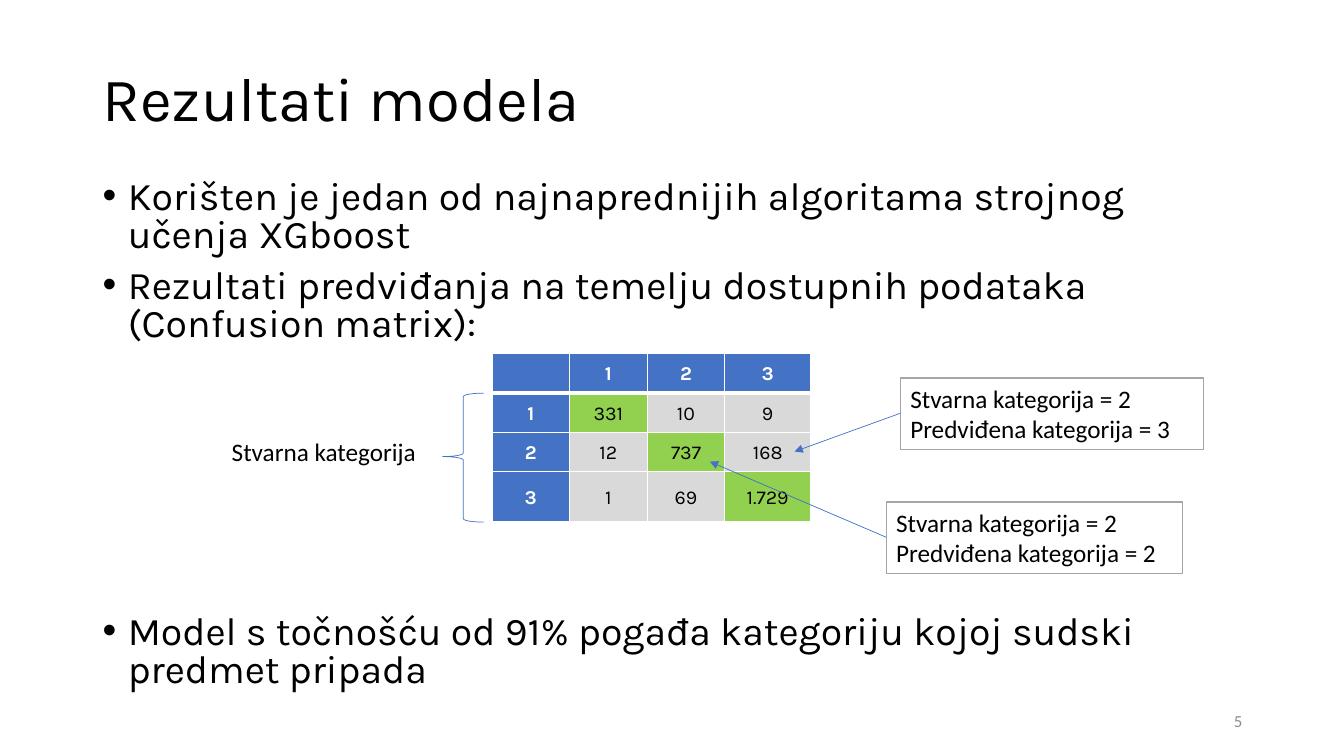
from lxml import etree
from pptx import Presentation
from pptx.dml.color import RGBColor
from pptx.enum.shapes import MSO_CONNECTOR, MSO_SHAPE
from pptx.enum.text import MSO_ANCHOR, PP_ALIGN
from pptx.oxml.ns import qn
from pptx.util import Inches, Pt

LEFT, CENTER, RIGHT = PP_ALIGN.LEFT, PP_ALIGN.CENTER, PP_ALIGN.RIGHT
TOP, MIDDLE = MSO_ANCHOR.TOP, MSO_ANCHOR.MIDDLE
STRAIGHT = MSO_CONNECTOR.STRAIGHT
RECTANGLE, LEFT_BRACE = MSO_SHAPE.RECTANGLE, MSO_SHAPE.LEFT_BRACE

COLORS = {
    "black": "000000", "white": "FFFFFF", "blue": "4472C4", "green": "92D050",
    "light gray": "D9D9D9", "border gray": "A5A5A5", "number gray": "8C8C8C",
}


def color(name):
    return RGBColor.from_string(COLORS[name])


class SlideBuilder:
    heading_font = "Karla"
    note_font = "Calibri"

    def __init__(self, slide):
        self.slide = slide

    def fill_text(self, frame, lines, font, size, ink="black", align=LEFT,
                  bold=False, spacing=None):
        frame.text = "\n".join(lines)
        for para in frame.paragraphs:
            para.alignment = align
            para.line_spacing = spacing
            for span in para.runs:
                span.font.name = font
                span.font.size = Pt(size)
                span.font.bold = bold
                span.font.color.rgb = color(ink)

    def text(self, area, lines, font, size, anchor=TOP, **style):
        box = self.slide.shapes.add_textbox(*map(Inches, area))
        frame = box.text_frame
        frame.word_wrap = True
        frame.vertical_anchor = anchor
        self.fill_text(frame, lines, font, size, **style)
        return frame

    def bullets(self, area, lines):
        frame = self.text(area, lines, self.heading_font, 28, spacing=0.8)
        for para in frame.paragraphs:
            para.space_before = Pt(10)
            properties = para._p.get_or_add_pPr()
            properties.set("marL", str(Inches(0.25)))
            properties.set("indent", str(-Inches(0.25)))
            etree.SubElement(properties, qn("a:buFont")).set("typeface", "Arial")
            etree.SubElement(properties, qn("a:buChar")).set("char", "•")

    def note(self, area, lines, border=None):
        box = self.slide.shapes.add_shape(RECTANGLE, *map(Inches, area))
        box.shadow.inherit = False
        box.fill.solid()
        box.fill.fore_color.rgb = color("white")
        if border:
            box.line.color.rgb = color(border)
            box.line.width = Pt(1)
        else:
            box.line.fill.background()
        box.text_frame.word_wrap = True
        box.text_frame.vertical_anchor = TOP
        self.fill_text(box.text_frame, lines, self.note_font, 18)

    def brace(self, area, curve, tip):
        brace = self.slide.shapes.add_shape(LEFT_BRACE, *map(Inches, area))
        brace.shadow.inherit = False
        brace.fill.background()
        brace.line.color.rgb = color("blue")
        brace.line.width = Pt(0.5)
        brace.adjustments[0] = curve
        brace.adjustments[1] = tip

    def arrow(self, start, end):
        arrow = self.slide.shapes.add_connector(
            STRAIGHT, *map(Inches, start + end))
        arrow.line.color.rgb = color("blue")
        arrow.line.width = Pt(0.5)
        tail = etree.SubElement(arrow.line._get_or_add_ln(), qn("a:tailEnd"))
        tail.set("type", "triangle")
        etree.SubElement(arrow._element.spPr, qn("a:effectLst"))

    def cell_borders(self, cell, widths):
        properties = cell._tc.get_or_add_tcPr()
        for side, width in widths.items():
            line = etree.SubElement(properties, qn(f"a:ln{side}"), w=str(Pt(width)))
            fill = etree.SubElement(line, qn("a:solidFill"))
            etree.SubElement(fill, qn("a:srgbClr"), val=COLORS["white"])

    def matrix(self, area, widths, heights, values):
        table = self.slide.shapes.add_table(
            len(heights), len(widths), *map(Inches, area)).table
        for column, width in zip(table.columns, widths):
            column.width = Inches(width)
        for row, height in zip(table.rows, heights):
            row.height = Inches(height)
        for r, row_values in enumerate(values):
            for c, value in enumerate(row_values):
                cell = table.cell(r, c)
                header = r == 0 or c == 0
                cell.margin_left = cell.margin_right = Inches(0.07)
                cell.margin_top = cell.margin_bottom = 0
                cell.vertical_anchor = MIDDLE
                self.cell_borders(cell, {"L": 1, "R": 1,
                                         "T": 3 if r == 1 else 1,
                                         "B": 3 if r == 0 else 1})
                cell.fill.solid()
                cell.fill.fore_color.rgb = color(
                    "blue" if header else "green" if r == c else "light gray")
                self.fill_text(cell.text_frame, [value], self.heading_font, 14,
                               ink="white" if header else "black", align=CENTER,
                               bold=header, spacing=1.07)


def main():
    deck = Presentation()
    deck.slide_width, deck.slide_height = Inches(13.33), Inches(7.5)
    page = SlideBuilder(deck.slides.add_slide(deck.slide_layouts[6]))

    # Title and bullets
    page.text((0.92, 0.4, 11.5, 1.22), ["Rezultati modela"], page.heading_font,
              44, anchor=MIDDLE, spacing=0.9)
    page.bullets((0.92, 1.74, 11.5, 1.75), [
        "Korišten je jedan od najnaprednijih algoritama strojnog učenja XGboost",
        "Rezultati predviđanja na temelju dostupnih podataka (Confusion matrix):",
    ])
    page.bullets((0.92, 6.06, 11.5, 0.9), [
        "Model s točnošću od 91% pogađa kategoriju kojoj sudski predmet pripada",
    ])

    # Confusion matrix
    page.matrix((4.88, 3.51, 3.16, 1.69), [0.77, 0.77, 0.77, 0.85],
                [0.39, 0.39, 0.39, 0.5],
                [["", "1", "2", "3"],
                 ["1", "331", "10", "9"],
                 ["2", "12", "737", "168"],
                 ["3", "1", "69", "1.729"]])

    # Explanations with arrows into the matrix
    for left, top, width, predicted, target in [
        (8.93, 3.75, 3.01, 3, (7.88, 4.48)),
        (8.79, 4.98, 2.94, 2, (7.04, 4.58)),
    ]:
        page.note((left, top, width, 0.71),
                  ["Stvarna kategorija = 2", f"Predviđena kategorija = {predicted}"],
                  border="border gray")
        page.arrow((left, top + 0.35), target)

    # Row label
    page.note((2.2, 4.28, 2.11, 0.4), ["Stvarna kategorija"])
    page.brace((4.39, 3.9, 0.41, 1.28), 0.083, 0.492)

    # Page number
    page.text((9.42, 6.95, 3, 0.4), ["5"], page.note_font, 12, anchor=MIDDLE,
              ink="number gray", align=RIGHT)

    deck.save("out.pptx")


if __name__ == "__main__":
    main()
